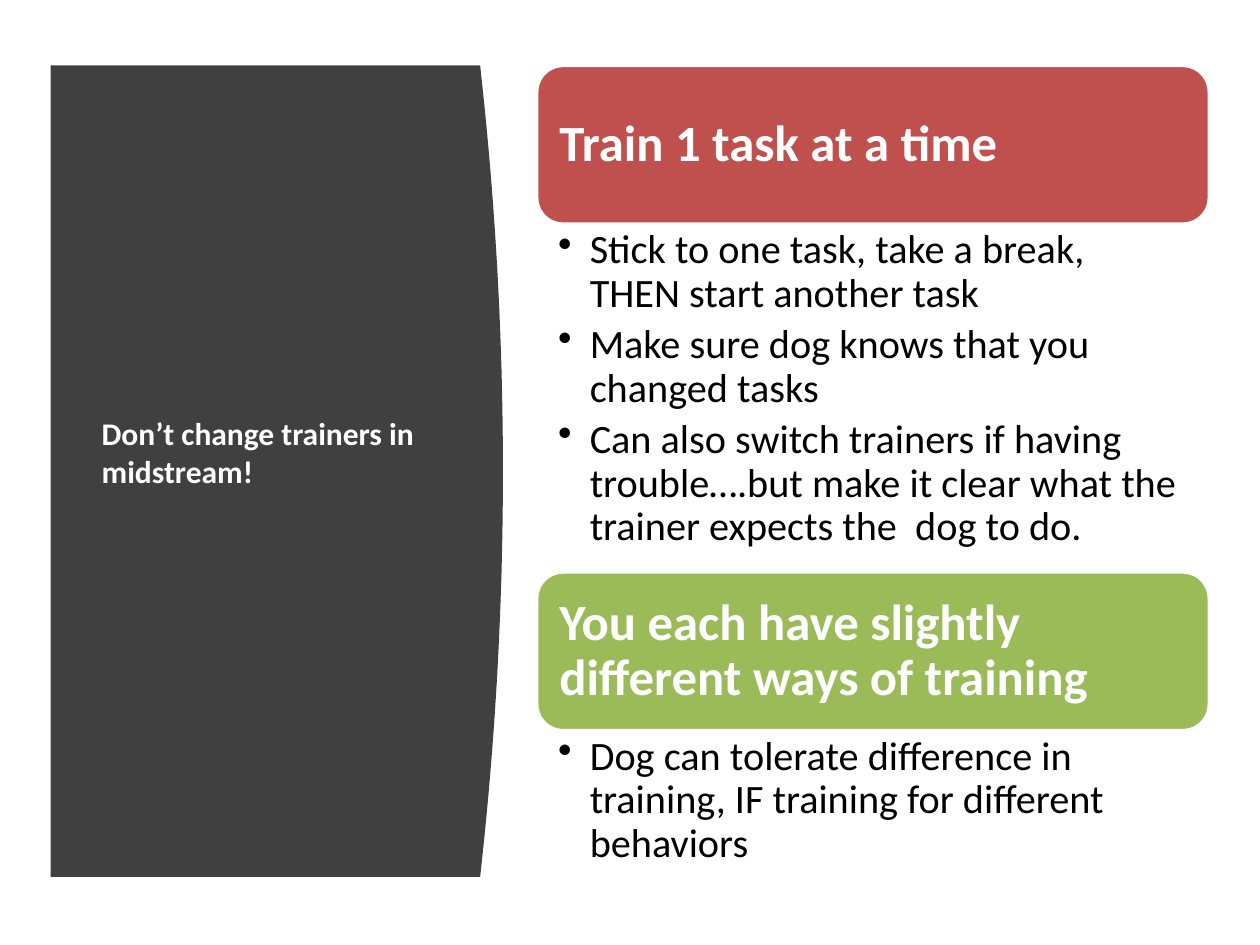
import pptx
import pptx.dml.color
import pptx.enum.shapes
import pptx.enum.text
import pptx.oxml.ns
import pptx.util
from lxml import etree
from pptx.util import Cm

ANCHOR = pptx.enum.text.MSO_ANCHOR


def color(value):
    return pptx.dml.color.RGBColor.from_string(value)


def write(shape, lines, size, ink, bold, insets, anchor, bulleted=False):
    """Fill a shape with left-aligned paragraphs; insets are left, top, right, bottom in cm."""
    frame = shape.text_frame
    frame.word_wrap = True
    frame.vertical_anchor = anchor
    (frame.margin_left, frame.margin_top,
     frame.margin_right, frame.margin_bottom) = map(Cm, insets)
    for index, line in enumerate(lines):
        paragraph = frame.add_paragraph() if index else frame.paragraphs[0]
        paragraph.text = line
        paragraph.alignment = pptx.enum.text.PP_ALIGN.LEFT
        if bulleted:
            paragraph.space_after = pptx.util.Pt(4.6)
            properties = paragraph._p.get_or_add_pPr()
            properties.set("marL", str(Cm(0.64)))
            properties.set("indent", str(-Cm(0.64)))
            etree.SubElement(properties, pptx.oxml.ns.qn("a:buChar"), char="•")
        paragraph.font.name = "Calibri"
        paragraph.font.size = pptx.util.Pt(size)
        paragraph.font.bold = bold
        paragraph.font.color.rgb = color(ink)


deck = pptx.Presentation()
deck.slide_width, deck.slide_height = Cm(25.4), Cm(19.05)
slide = deck.slides.add_slide(deck.slide_layouts[6])
shapes = slide.shapes

# Dark panel whose right edge bulges as a parabola
panel_left, panel_top, panel_bottom = 1.02, 1.32, 17.68
edge, bulge, steps = 9.68, 0.46, 40
curve = []
for step in range(steps + 1):
    t = step / steps
    curve.append((Cm(edge + bulge * 4 * t * (1 - t)),
                  Cm(panel_top + (panel_bottom - panel_top) * t)))
outline = shapes.build_freeform(Cm(panel_left), Cm(panel_top))
outline.add_line_segments(curve + [(Cm(panel_left), Cm(panel_bottom))], close=True)
panel = outline.convert_to_shape()
panel.shadow.inherit = False
panel.fill.solid()
panel.fill.fore_color.rgb = color("404040")
panel.line.fill.background()

title = shapes.add_textbox(Cm(1.8), Cm(2.45), Cm(7.11), Cm(13.31))
write(title, ["Don’t change trainers in midstream!"], 18, "FFFFFF", True,
      (0.25, 0.13, 0.25, 0.13), ANCHOR.MIDDLE)

# Each section: top, fill, heading, body height, points
sections = [
    (1.32, "C0504D", "Train 1 task at a time", 7.01, [
        "Stick to one task, take a break, THEN start another task",
        "Make sure dog knows that you changed tasks",
        "Can also switch trainers if having trouble….but make it clear "
        "what the trainer expects the  dog to do.",
    ]),
    (11.53, "9BBB59", "You each have slightly different ways of training", 2.92, [
        "Dog can tolerate difference in training, IF training for different behaviors",
    ]),
]
left, width, heading_height = 10.82, 13.56, 3.2
for top, fill, heading, body_height, points in sections:
    banner = shapes.add_shape(pptx.enum.shapes.MSO_SHAPE.ROUNDED_RECTANGLE,
                              Cm(left), Cm(top), Cm(width), Cm(heading_height))
    banner.shadow.inherit = False
    banner.fill.solid()
    banner.fill.fore_color.rgb = color(fill)
    banner.line.color.rgb = color("FFFFFF")
    banner.line.width = pptx.util.Pt(2)
    write(banner, [heading], 29, "FFFFFF", True, (0.3, 0.3, 0.3, 0.3), ANCHOR.MIDDLE)

    body = shapes.add_textbox(Cm(left), Cm(top + heading_height), Cm(width), Cm(body_height))
    write(body, points, 23, "000000", False, (0.43, 0.1, 0.58, 0.1), ANCHOR.TOP, bulleted=True)

    for paragraph in [*banner.text_frame.paragraphs, *body.text_frame.paragraphs]:
        paragraph.line_spacing = 0.9

deck.save("out.pptx")
